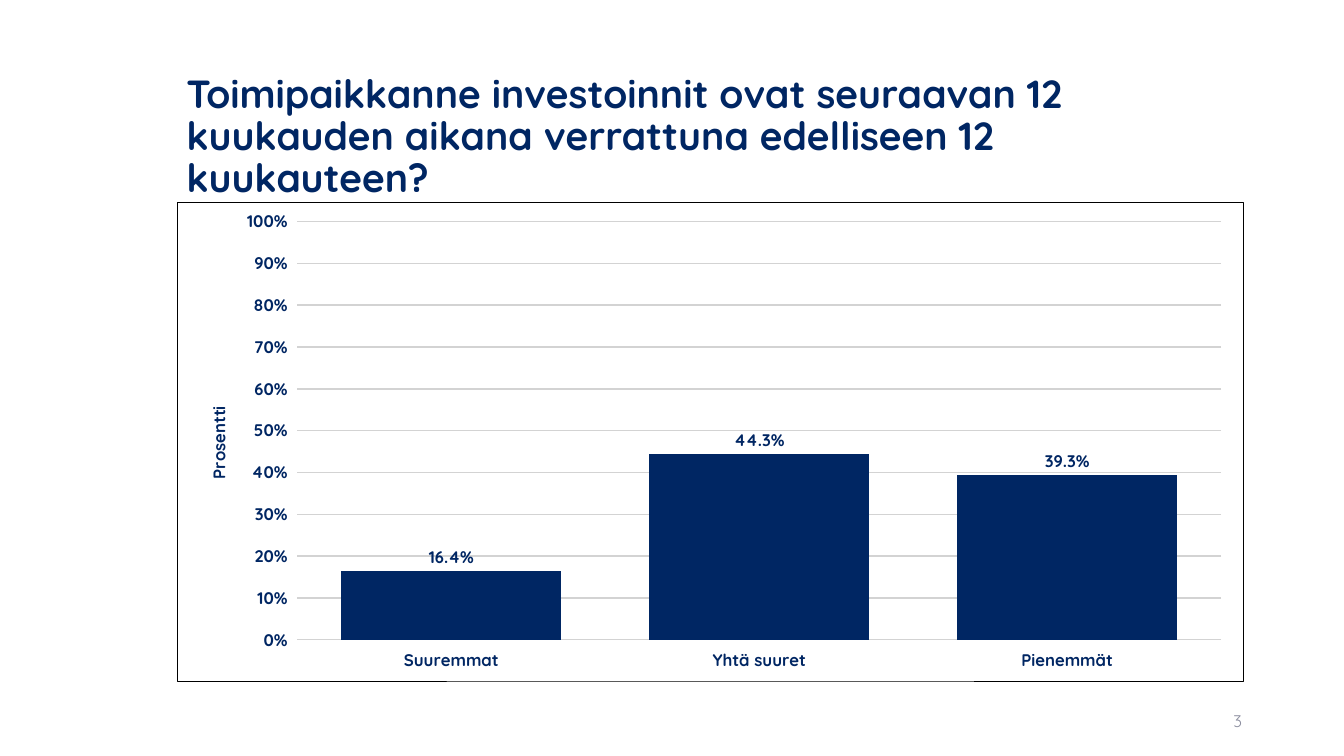
from lxml.etree import SubElement
from pptx import Presentation
from pptx.chart.data import CategoryChartData
from pptx.dml.color import RGBColor
from pptx.enum.chart import XL_CHART_TYPE as ChartType
from pptx.enum.chart import XL_LABEL_POSITION as LabelPosition
from pptx.enum.text import MSO_ANCHOR as Anchor, PP_ALIGN as Align
from pptx.oxml import parse_xml
from pptx.oxml.ns import nsdecls, qn
from pptx.util import Cm, Pt

COLORS = {"navy": "002663", "gray": "8C8E9F", "grid": "D3D3D3",
          "white": "FFFFFF", "black": "000000"}
LEFT, WIDTH = 4.45, 26.9


def rgb(name):
    return RGBColor.from_string(COLORS[name])


class SlideBuilder:
    font_name = "Quicksand"

    def __init__(self, deck):
        self.page = deck.slides.add_slide(deck.slide_layouts[6])

    def style(self, font, color, **values):
        font.color.rgb = rgb(color)
        for key, value in {"name": self.font_name, **values}.items():
            setattr(font, key, value)

    def text(self, place, words, color, para_format, **font_values):
        box = self.page.shapes.add_textbox(*map(Cm, place))
        box.text_frame.word_wrap = True
        box.text_frame.vertical_anchor = Anchor.MIDDLE
        para = box.text_frame.paragraphs[0]
        for key, value in para_format.items():
            setattr(para, key, value)
        span = para.add_run()
        span.text = words
        self.style(span.font, color, **font_values)

    def layout(self, parent, index, **fractions):
        """Place a chart part by fractions of the chart frame."""
        for old in parent.findall(qn("c:layout")):
            parent.remove(old)
        layout = parse_xml(f"<c:layout {nsdecls('c')}/>")
        manual = SubElement(layout, qn("c:manualLayout"))
        if "w" in fractions:
            SubElement(manual, qn("c:layoutTarget")).set("val", "inner")
        for key in ("x", "y"):
            SubElement(manual, qn(f"c:{key}Mode")).set("val", "edge")
        for key, value in fractions.items():
            SubElement(manual, qn(f"c:{key}")).set("val", str(value))
        parent.insert(index, layout)

    def frame(self, chart):
        chart_part = chart.element.find(qn("c:chart"))
        chart_part.addnext(parse_xml(
            f'<c:spPr {nsdecls("c", "a")}>'
            f'<a:solidFill><a:srgbClr val="{COLORS["white"]}"/></a:solidFill>'
            f'<a:ln w="{Pt(0.5)}"><a:solidFill><a:srgbClr val="{COLORS["black"]}"/>'
            '</a:solidFill></a:ln></c:spPr>'))
        return chart_part

    def columns(self, place, categories, values, axis_title):
        data = CategoryChartData()
        data.categories = categories
        data.add_series("Series 1", values)
        chart = self.page.shapes.add_chart(
            ChartType.COLUMN_CLUSTERED, *map(Cm, place), data).chart
        chart.has_legend = chart.has_title = False
        label_font = {"size": Pt(12), "bold": True}
        self.style(chart.font, "navy", **label_font)

        # Columns and their labels
        plot = chart.plots[0]
        for key, value in {"gap_width": 40, "overlap": -2,
                           "vary_by_categories": False,
                           "has_data_labels": True}.items():
            setattr(plot, key, value)
        fill = plot.series[0].format.fill
        fill.solid()
        fill.fore_color.rgb = rgb("navy")
        for key, value in {"show_value": True, "number_format": "0.0%",
                           "number_format_is_linked": False,
                           "position": LabelPosition.OUTSIDE_END}.items():
            setattr(plot.data_labels, key, value)
        self.style(plot.data_labels.font, "navy", **label_font)

        # Axes
        value_axis = chart.value_axis
        for key, value in {"minimum_scale": 0, "maximum_scale": 1,
                           "major_unit": 0.1, "has_major_gridlines": True}.items():
            setattr(value_axis, key, value)
        value_axis.tick_labels.number_format = "0%"
        value_axis.tick_labels.number_format_is_linked = False
        grid = value_axis.major_gridlines.format.line
        grid.color.rgb = rgb("grid")
        grid.width = Pt(1)
        for axis in (value_axis, chart.category_axis):
            axis.format.line.fill.background()
        title = value_axis.axis_title
        title.text_frame.text = axis_title
        self.style(title.text_frame.paragraphs[0].runs[0].font, "navy", **label_font)

        # Frame and inner placement
        chart_part = self.frame(chart)
        self.layout(chart_part.find(qn("c:plotArea")), 0,
                    x=0.113, y=0.041, w=0.866, h=0.873)
        self.layout(title._element, 1, x=0.025, y=0.42)


def main():
    deck = Presentation()
    deck.slide_width, deck.slide_height = Cm(33.87), Cm(19.05)
    builder = SlideBuilder(deck)

    # Heading
    builder.text((LEFT, 1.63, WIDTH, 3.68),
                 "Toimipaikkanne investoinnit ovat seuraavan 12 kuukauden "
                 "aikana verrattuna edelliseen 12 kuukauteen?",
                 "navy", {"line_spacing": 0.9}, size=Pt(28), bold=True)

    # Page number
    builder.text((23.93, 17.65, 7.62, 1.02), "3", "gray",
                 {"alignment": Align.RIGHT}, size=Pt(12))

    # Answers
    builder.columns((LEFT, 5.08, WIDTH, 12.09),
                    ("Suuremmat", "Yhtä suuret", "Pienemmät"),
                    (0.164, 0.443, 0.393), "Prosentti")
    deck.save("out.pptx")


if __name__ == "__main__":
    main()
